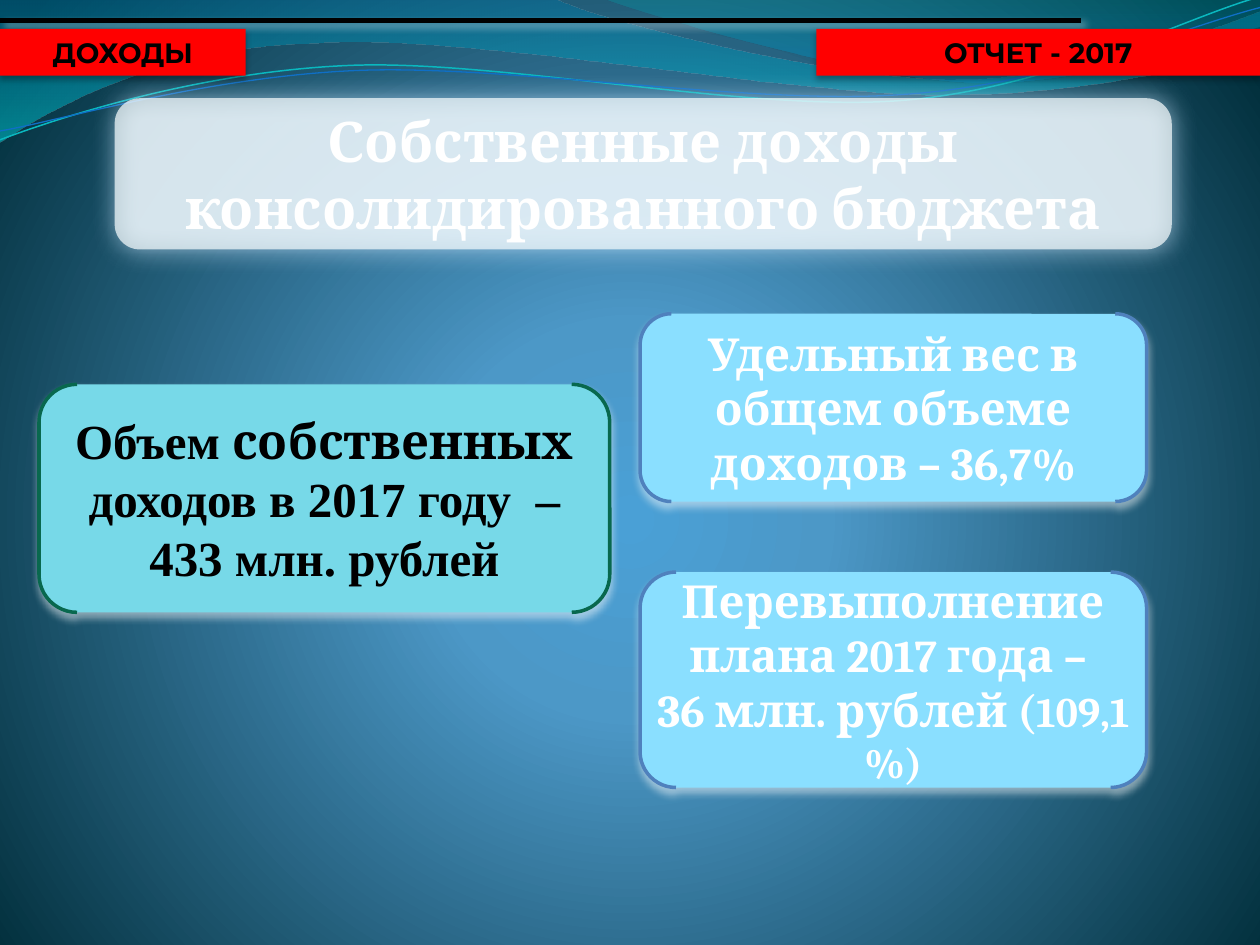
from dataclasses import dataclass
from typing import NamedTuple, Optional

from lxml.etree import SubElement
from pptx import Presentation
from pptx.dml.color import RGBColor
from pptx.enum.shapes import MSO_CONNECTOR, MSO_SHAPE
from pptx.enum.text import MSO_ANCHOR, MSO_AUTO_SIZE, PP_ALIGN
from pptx.oxml.ns import qn
from pptx.util import Emu, Inches, Pt

COLUMNS, ROWS = 10, 7.5
CELL = Inches(1)

BLACK = RGBColor(0x00, 0x00, 0x00)
WHITE = RGBColor(0xFF, 0xFF, 0xFF)
RED = RGBColor(0xFF, 0x00, 0x00)
FROST = RGBColor(0xF8, 0xFD, 0xFE)
GLOW = RGBColor(0xC8, 0xE3, 0xFB)
TURQUOISE = RGBColor(0x77, 0xD9, 0xE8)
GREEN = RGBColor(0x08, 0x68, 0x4E)
SKY = RGBColor(0x8A, 0xDF, 0xFF)
STEEL = RGBColor(0x4F, 0x81, 0xBD)
WAVE_TEAL = RGBColor(0x0A, 0xB8, 0xBF)
WAVE_BLUE = RGBColor(0x0F, 0x6F, 0xC6)


class Box(NamedTuple):
    """Left, top, width and height in grid cells."""
    left: float
    top: float
    width: float
    height: float


class Shadow(NamedTuple):
    color: RGBColor
    opacity: int
    blur: float
    distance: float
    angle: int


class Stop(NamedTuple):
    position: int
    color: RGBColor
    opacity: int = 100


class Run(NamedTuple):
    text: str
    font: str
    size: float


@dataclass
class Panel:
    box: Box
    fill: RGBColor
    shadow: Shadow
    paragraphs: list
    border: Optional[RGBColor] = None
    opacity: int = 100
    text_color: RGBColor = WHITE
    geometry: MSO_SHAPE = MSO_SHAPE.DOUBLE_BRACKET
    inset: float = 0


@dataclass
class Wave:
    """A start point, then cubic curves (three points) or straight segments (one)."""
    start: tuple
    segments: list
    stops: Optional[list] = None
    line: Optional[RGBColor] = None
    weight: float = 0


BAR_SHADOW = Shadow(BLACK, 32, 3.5, 2.2, 90)
CARD_SHADOW = Shadow(WHITE, 48, 4.5, 3, 90)
TITLE_BOX = Box(0.91, 0.78, 8.39, 1.2)
TITLE = [[Run("Собственные доходы консолидированного бюджета", "Cambria", 32)]]

BACKGROUND = [Stop(0, RGBColor(0x4A, 0xA0, 0xD6)), Stop(25, RGBColor(0x4C, 0x98, 0xC7)),
              Stop(100, RGBColor(0x00, 0x2C, 0x38))]

WAVES = [
    Wave((0, 0), [
        [(4.4, -0.01)],
        [(4.76, 0.17), (6.64, 0.63), (7.58, 0.63)],
        [(8.53, 0.63), (9.58, 0.26), (10, 0.09)],
        [(10.01, 0.36)],
        [(9.83, 0.44), (8.7, 0.76), (7.46, 0.75)],
        [(6.22, 0.75), (3.82, 0.28), (2.57, 0.34)],
        [(1.29, 0.36), (0.46, 0.83), (-0.01, 1.13)],
    ], stops=[Stop(0, RGBColor(0x00, 0x74, 0xA1), 45), Stop(100, RGBColor(0x00, 0xC6, 0xCF), 55)]),
    Wave((4.79, -0.01), [
        [(5.09, 0.11), (6.82, 0.62), (7.69, 0.65)],
        [(8.56, 0.69), (9.61, 0.32), (10, 0.21)],
        [(10, 0)],
    ], stops=[Stop(0, RGBColor(0x00, 0xA1, 0xA9), 30), Stop(80, RGBColor(0x00, 0x8B, 0xBF), 45)]),
    Wave((0, 1.11), [
        [(0.48, 0.93), (1.58, 0.57), (2.77, 0.52)],
        [(3.95, 0.47), (5.93, 0.89), (7.13, 0.8)],
        [(8.33, 0.71), (9.38, 0.15), (9.98, -0.02)],
    ], line=WAVE_TEAL, weight=0.85),
    Wave((0, 1.04), [
        [(0.47, 0.96), (1.64, 0.61), (2.83, 0.56)],
        [(4.03, 0.51), (5.97, 0.84), (7.17, 0.75)],
        [(8.36, 0.67), (9.41, 0.21), (10, 0.06)],
    ], line=WAVE_BLUE, weight=0.75),
]


def header_bar(left: float, width: float, label: str) -> Panel:
    return Panel(Box(left, 0.23, width, 0.37), RED, BAR_SHADOW, [[Run(label, "Montserrat", 16)]],
                 text_color=BLACK, geometry=MSO_SHAPE.RECTANGLE, inset=0.05)


def result_card(top: float, height: float, paragraphs: list) -> Panel:
    return Panel(Box(5.08, top, 4.02, height), SKY, CARD_SHADOW, paragraphs, border=STEEL)


PANELS = [
    header_bar(6.48, 3.52, "ОТЧЕТ - 2017"),
    Panel(TITLE_BOX, FROST, Shadow(GLOW, 90, 15, 0, 45), [], opacity=70),
    header_bar(0, 1.95, "ДОХОДЫ"),
    Panel(Box(0.31, 3.05, 4.53, 1.81), TURQUOISE, CARD_SHADOW,
          [[Run("Объем ", "Times New Roman", 28), Run("собственных", "Cambria", 28),
            Run(" доходов в 2017 году  – 433 млн. рублей", "Times New Roman", 28)]],
          border=GREEN, text_color=BLACK),
    result_card(4.54, 1.71, [
        [Run("Перевыполнение плана 2017 года – ", "Cambria", 26)],
        [Run("36 млн. рублей (", "Cambria", 26), Run("109,1 %)", "Cambria", 24)]]),
    result_card(2.49, 1.49, [[Run("Удельный вес в общем объеме доходов – 36,7%", "Cambria", 26)]]),
]


def cells(count: float) -> Emu:
    return Emu(round(count * CELL))


def add_color(parent, color: RGBColor, opacity: int):
    node = SubElement(parent, qn("a:srgbClr"), val=str(color))
    if opacity < 100:
        SubElement(node, qn("a:alpha"), val=str(opacity * 1000))


def set_gradient(fill, owner, stops: list, angle: Optional[int] = None):
    """Linear when an angle is given, otherwise circular."""
    fill.gradient()
    gradient = owner.find(".//" + qn("a:gradFill"))
    for child in list(gradient):
        gradient.remove(child)
    stop_list = SubElement(gradient, qn("a:gsLst"))
    for stop in stops:
        add_color(SubElement(stop_list, qn("a:gs"), pos=str(stop.position * 1000)),
                  stop.color, stop.opacity)
    if angle is not None:
        SubElement(gradient, qn("a:lin"), ang=str(angle * 60000), scaled="0")
    else:
        circle = SubElement(gradient, qn("a:path"), path="circle")
        SubElement(circle, qn("a:fillToRect"), l="10000", t="110000", r="10000", b="100000")


def set_shadow(shape, shadow: Optional[Shadow] = None):
    """Replace the theme's effects; call after fill and line are set."""
    effects = SubElement(shape._element.spPr, qn("a:effectLst"))
    if shadow:
        outer = SubElement(effects, qn("a:outerShdw"), blurRad=str(Pt(shadow.blur)),
                           dist=str(Pt(shadow.distance)), dir=str(shadow.angle * 60000),
                           algn="ctr", rotWithShape="0")
        add_color(outer, shadow.color, shadow.opacity)


def write_text(shape, paragraphs: list, *, color: RGBColor, inset: float = 0, bold: bool = True):
    frame = shape.text_frame
    frame.word_wrap = True
    frame.auto_size = MSO_AUTO_SIZE.NONE
    frame.vertical_anchor = MSO_ANCHOR.MIDDLE
    frame.margin_left = frame.margin_right = cells(2 * inset)
    frame.margin_top = frame.margin_bottom = cells(inset)
    for index, runs in enumerate(paragraphs):
        paragraph = frame.add_paragraph() if index else frame.paragraphs[0]
        paragraph.alignment = PP_ALIGN.CENTER
        for piece in runs:
            run = paragraph.add_run()
            run.text = piece.text
            run.font.name, run.font.size = piece.font, Pt(piece.size)
            run.font.bold, run.font.color.rgb = bold, color


def bend_segments(shape, segments: list):
    """Turn the straight segments that have control points into cubic curves."""
    straight = list(shape._element.iter(qn("a:lnTo")))
    for node, segment in zip(straight, segments):
        if len(segment) == 3:
            curve = node.makeelement(qn("a:cubicBezTo"))
            for x, y in segment:
                SubElement(curve, qn("a:pt"), x=str(cells(x) - shape.left),
                           y=str(cells(y) - shape.top))
            node.getparent().replace(node, curve)


def draw_wave(slide, wave: Wave):
    builder = slide.shapes.build_freeform(*map(cells, wave.start))
    anchors = [tuple(map(cells, segment[-1])) for segment in wave.segments]
    builder.add_line_segments(anchors, close=wave.stops is not None)
    shape = builder.convert_to_shape()
    bend_segments(shape, wave.segments)
    if wave.stops:
        set_gradient(shape.fill, shape._element, wave.stops, angle=90)
        shape.line.fill.background()
    else:
        shape.fill.background()
        shape.line.color.rgb, shape.line.width = wave.line, Pt(wave.weight)
    set_shadow(shape)


def draw_panel(slide, panel: Panel):
    shape = slide.shapes.add_shape(panel.geometry, *map(cells, panel.box))
    shape.fill.solid()
    shape.fill.fore_color.rgb = panel.fill
    if panel.opacity < 100:
        solid = shape._element.spPr.find(qn("a:solidFill"))
        solid.remove(solid[0])
        add_color(solid, panel.fill, panel.opacity)
    if panel.border:
        shape.line.color.rgb, shape.line.width = panel.border, Pt(2)
    else:
        shape.line.fill.background()
    set_shadow(shape, panel.shadow)
    write_text(shape, panel.paragraphs, color=panel.text_color, inset=panel.inset)


def draw_top_rule(slide):
    rule = slide.shapes.add_connector(MSO_CONNECTOR.STRAIGHT, *map(cells, (0, 0.16, 8.58, 0.16)))
    rule.line.color.rgb, rule.line.width = BLACK, Pt(3)
    set_shadow(rule, Shadow(WHITE, 40, 4, 3, 45))


def place_title(slide):
    title = slide.shapes.title
    title.left, title.top, title.width, title.height = map(cells, TITLE_BOX)
    write_text(title, TITLE, color=WHITE)
    slide.shapes._spTree.append(title._element)


def main():
    deck = Presentation()
    deck.slide_width, deck.slide_height = cells(COLUMNS), cells(ROWS)
    slide = deck.slides.add_slide(deck.slide_layouts[5])
    set_gradient(slide.background.fill, slide._element, BACKGROUND)
    for wave in WAVES:
        draw_wave(slide, wave)
    draw_top_rule(slide)
    for panel in PANELS:
        draw_panel(slide, panel)
    place_title(slide)
    deck.save("out.pptx")


if __name__ == "__main__":
    main()
